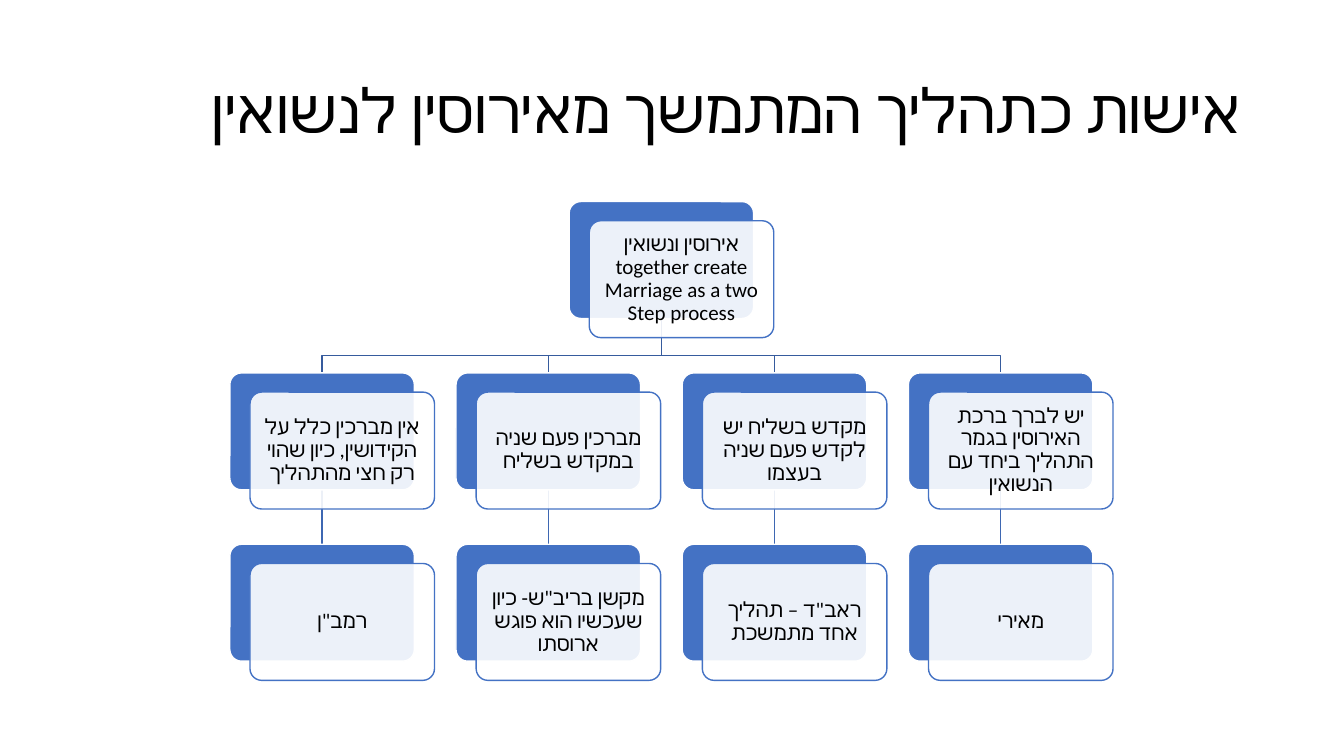
from lxml import etree
from pptx import Presentation
from pptx import util as u
from pptx.dml.color import RGBColor
from pptx.enum import shapes, text
from pptx.oxml.ns import qn

PX = 9144
CARD_WIDTH, CARD_HEIGHT = 183, 116
SHIFT_X, SHIFT_Y = 20, 19
ROW_PITCH = 170
FONT = "Calibri"
COLORS = {"blue": "4472C4", "branch": "365B9D", "stem": "3E67B2", "white": "FFFFFF", "black": "000000"}
TITLE = "אישות כתהליך המתמשך מאירוסין לנשואין"
ROOT = "אירוסין ונשואין together create Marriage as a two Step process"
BRANCHES = [
    ("אין מברכין כלל על הקידושין, כיון שהוי רק חצי מהתהליך", 'רמב"ן'),
    ("מברכין פעם שניה במקדש בשליח", 'מקשן בריב"ש- כיון שעכשיו הוא פוגש ארוסתו'),
    ("מקדש בשליח יש לקדש פעם שניה בעצמו", 'ראב"ד – תהליך אחד מתמשכת'),
    ("יש לברך ברכת האירוסין בגמר התהליך ביחד עם הנשואין", "מאירי"),
]


def px(*lengths):
    """Turn pixel lengths into EMU."""
    return [u.Emu(round(length * PX)) for length in lengths]


def color(name):
    """Return the named colour."""
    return RGBColor.from_string(COLORS[name])


def write(frame, words, size, align, rtl=False, margins=(10, 5)):
    """Fill a text frame with one formatted paragraph."""
    frame.word_wrap = True
    frame.auto_size = text.MSO_AUTO_SIZE.NONE
    frame.vertical_anchor = text.MSO_ANCHOR.MIDDLE
    frame.margin_left, frame.margin_top = px(*margins)
    frame.margin_right, frame.margin_bottom = px(*margins)
    paragraph = frame.paragraphs[0]
    paragraph.alignment = align
    paragraph.line_spacing = 0.9
    if rtl:
        paragraph._p.get_or_add_pPr().set("rtl", "1")
    run = paragraph.add_run()
    run.text = words
    run.font.size = u.Pt(size)
    run.font.name = FONT
    run.font.color.rgb = color("black")
    etree.SubElement(run._r.get_or_add_rPr(), qn("a:cs"), typeface=FONT)


def add_panel(slide, left, top, fill, line):
    """Add one rounded rectangle of card size."""
    shape = slide.shapes.add_shape(
        shapes.MSO_SHAPE.ROUNDED_RECTANGLE, *px(left, top, CARD_WIDTH, CARD_HEIGHT))
    shape.adjustments[0] = 0.1
    shape.shadow.inherit = False
    shape.fill.solid()
    shape.fill.fore_color.rgb = color(fill)
    shape.line.color.rgb = color(line)
    shape.line.width = u.Pt(1)
    return shape


def add_card(slide, left, top, words):
    """Add a blue panel with a translucent text panel shifted over it."""
    add_panel(slide, left, top, "blue", "white")
    front = add_panel(slide, left + SHIFT_X, top + SHIFT_Y, "white", "blue")
    fill_color = front.fill._xPr.find(qn("a:solidFill"))[0]
    etree.SubElement(fill_color, qn("a:alpha"), val="90000")
    write(front.text_frame, words, 15, text.PP_ALIGN.CENTER, margins=(6, 6))


def add_branch(slide, start_x, end_x, top, bottom):
    """Add an elbow line from the root card down to a branch card."""
    middle = top + 37
    builder = slide.shapes.build_freeform(*px(start_x, top), scale=1.0)
    builder.add_line_segments(
        [px(start_x, middle), px(end_x, middle), px(end_x, bottom)], close=False)
    shape = builder.convert_to_shape()
    shape.shadow.inherit = False
    shape.fill.background()
    shape.line.color.rgb = color("branch")
    shape.line.width = u.Pt(1)


def add_stem(slide, x, top, bottom):
    """Add a vertical line between two cards of a column."""
    stem = slide.shapes.add_connector(shapes.MSO_CONNECTOR.STRAIGHT, *px(x, top, x, bottom))
    stem.line.color.rgb = color("stem")
    stem.line.width = u.Pt(1)
    etree.SubElement(stem._element.spPr, qn("a:effectLst"))


def add_title(slide, left, top, width, height):
    """Place and write the right-to-left title."""
    title = slide.shapes.title
    title.left, title.top, title.width, title.height = px(left, top, width, height)
    write(title.text_frame, TITLE, 44, text.PP_ALIGN.RIGHT, rtl=True)


def add_hierarchy(slide, left, top, width):
    """Draw the root card, its branches and their sources within a width."""
    span = width - SHIFT_X - CARD_WIDTH
    columns = [left + span * index / (len(BRANCHES) - 1) for index in range(len(BRANCHES))]
    root_left = left + span / 2
    rows = [top + ROW_PITCH * index for index in range(3)]
    half = CARD_WIDTH / 2
    for column in columns:
        add_stem(slide, column + half, rows[1] + CARD_HEIGHT, rows[2])
        add_branch(slide, root_left + half, column + half, rows[0] + CARD_HEIGHT, rows[1])
    add_card(slide, root_left, rows[0], ROOT)
    for column, branch in zip(columns, BRANCHES):
        for row, words in zip(rows[1:], branch):
            add_card(slide, column, row, words)


def main():
    """Build and save the slide."""
    presentation = Presentation()
    presentation.slide_width, presentation.slide_height = px(1333, 750)
    slide = presentation.slides.add_slide(presentation.slide_layouts[5])
    add_title(slide, 92, 40, 1150, 145)
    add_hierarchy(slide, 228, 200, 876)
    presentation.save("out.pptx")


if __name__ == "__main__":
    main()
